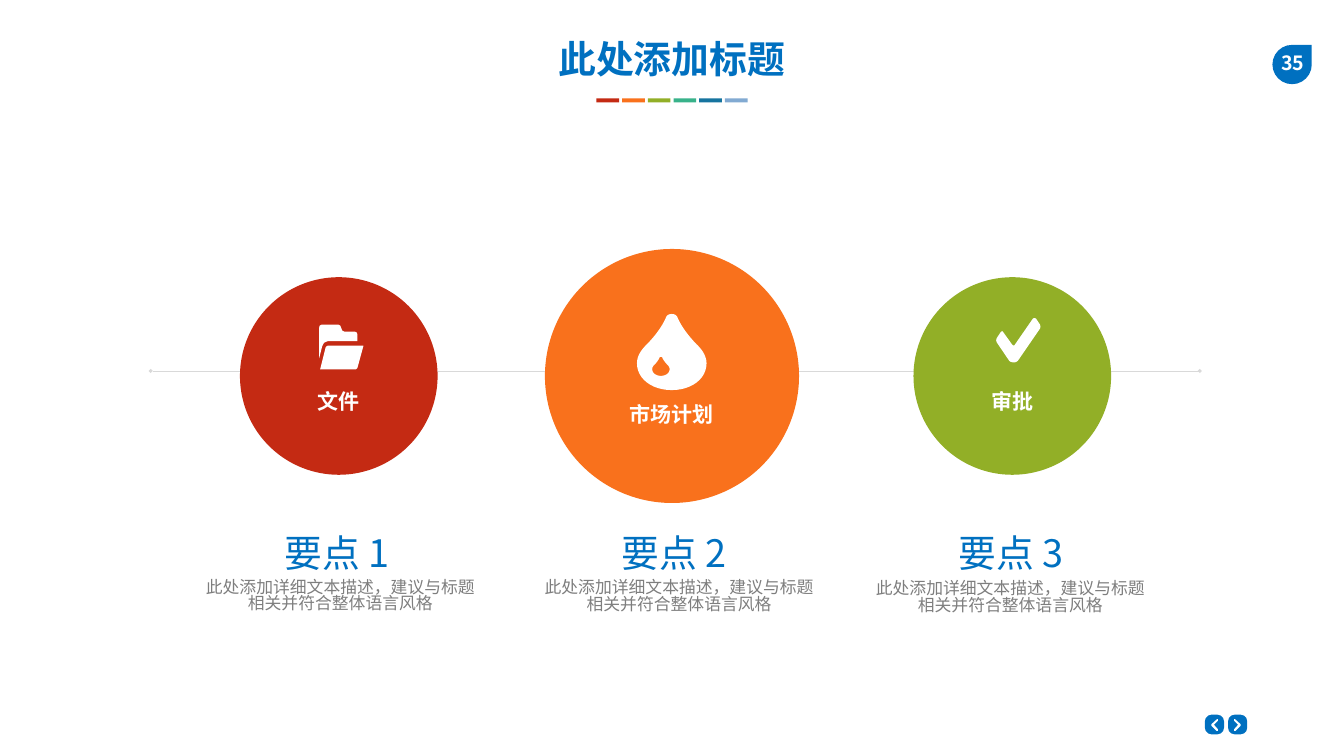
"""Build the three key points slide with circles, icons and captions."""
from lxml import etree
from pptx import Presentation
from pptx.dml.color import RGBColor
from pptx.enum.dml import MSO_LINE
from pptx.enum.shapes import MSO_CONNECTOR, MSO_SHAPE
from pptx.enum.text import MSO_ANCHOR, PP_ALIGN
from pptx.oxml.ns import qn
from pptx.util import Inches, Pt

OVAL, RECT, ROUND, TEAR = (MSO_SHAPE.OVAL, MSO_SHAPE.RECTANGLE,
                           MSO_SHAPE.ROUNDED_RECTANGLE, MSO_SHAPE.TEAR)
STRAIGHT, DOTTED = MSO_CONNECTOR.STRAIGHT, MSO_LINE.ROUND_DOT
MIDDLE, TOP, CENTER = MSO_ANCHOR.MIDDLE, MSO_ANCHOR.TOP, PP_ALIGN.CENTER

FONT = "Noto Sans CJK SC"
WHITE = RGBColor(0xFF, 0xFF, 0xFF)
BLUE = RGBColor(0x00, 0x70, 0xC0)
GRAY = RGBColor(0x7E, 0x7E, 0x7E)
PALE = RGBColor(0xD9, 0xD9, 0xD9)
RED = RGBColor(0xC4, 0x2A, 0x13)
ORANGE = RGBColor(0xF9, 0x71, 0x1C)
GREEN = RGBColor(0x92, 0xAF, 0x27)
TEAL = RGBColor(0x38, 0xB2, 0x8A)
OCEAN = RGBColor(0x16, 0x74, 0x9F)
SKY = RGBColor(0x82, 0xAA, 0xD2)

TITLE = "此处添加标题"
PAGE = "35"
DETAIL = "此处添加详细文本描述，建议与标题相关并符合整体语言风格"
POINTS = [
    dict(label="文件", head="要点 1", color=RED, center=6.72, size=3.92,
         drop=1.0, detail_at=(3.79, 11.38)),
    dict(label="市场计划", head="要点 2", color=ORANGE, center=13.33, size=5.04,
         drop=1.5, detail_at=(10.51, 11.39)),
    dict(label="审批", head="要点 3", color=GREEN, center=20.08, size=3.92,
         drop=1.0, detail_at=(17.08, 11.41)),
]
STRIPES = [RED, ORANGE, GREEN, TEAL, OCEAN, SKY]
CIRCLE_Y = 7.46

CHECK = [(20.09, 7.19), (20.05, 7.18), (20.02, 7.16), (19.77, 6.79), (19.76, 6.75),
         (19.77, 6.71), (19.85, 6.59), (19.88, 6.57), (19.9, 6.59), (20.08, 6.84),
         (20.11, 6.86), (20.13, 6.84), (20.49, 6.32), (20.52, 6.31), (20.55, 6.32),
         (20.63, 6.44), (20.64, 6.48), (20.63, 6.52), (20.19, 7.16), (20.16, 7.18),
         (20.13, 7.19)]
FOLDER_BACK = [(6.5, 6.77), (6.47, 6.78), (6.43, 6.8), (6.41, 6.83), (6.39, 6.87),
               (6.33, 7.11), (6.33, 6.51), (6.34, 6.46), (6.38, 6.44), (6.71, 6.44),
               (6.75, 6.46), (6.77, 6.51), (6.79, 6.56), (6.83, 6.58), (7.04, 6.58),
               (7.08, 6.6), (7.09, 6.64), (7.09, 6.77)]
FOLDER_FRONT = [(7.21, 6.86), (7.09, 7.3), (7.07, 7.32), (7.05, 7.33), (6.35, 7.33),
                (6.46, 6.89), (6.48, 6.87), (6.5, 6.86)]
DROP_CURVES = [
    [(0, 0), (0.06, 0), (0.1, 0.03), (0.11, 0.06)],
    [(0.11, 0.06), (0.2, 0.27), (0.34, 0.44), (0.49, 0.6)],
    [(0.49, 0.6), (0.62, 0.72), (0.69, 0.85), (0.69, 0.98)],
    [(0.69, 0.98), (0.69, 1.28), (0.4, 1.51), (0, 1.51)],
]
CHEVRON = [(0.05, -0.11), (0.07, -0.11), (0.07, -0.08), (-0.01, 0), (0.07, 0.09),
           (0.07, 0.12), (0.04, 0.12), (-0.06, 0.02), (-0.06, -0.01)]
ARROWS = [(24.09, 1), (24.55, -1)]


def bezier(curve, steps=12):
    for i in range(steps):
        t = i / steps
        weights = ((1 - t) ** 3, 3 * t * (1 - t) ** 2, 3 * t * t * (1 - t), t ** 3)
        yield tuple(sum(w * pt[axis] for w, pt in zip(weights, curve)) for axis in (0, 1))


def droplet(cx, top, scale):
    right = [pt for curve in DROP_CURVES for pt in bezier(curve)] + [(0, 1.51)]
    left = [(-x, y) for x, y in reversed(right[1:-1])]
    return [(cx + x * scale, top + y * scale) for x, y in right + left]


def paint(sp, color):
    sp.shadow.inherit = False
    sp.fill.solid()
    sp.fill.fore_color.rgb = color
    sp.line.fill.background()
    return sp


def add_shape(s, kind, box, color):
    return paint(s.shapes.add_shape(kind, *map(Inches, box)), color)


def add_icon(s, *contours):
    emu = [[(Inches(x), Inches(y)) for x, y in c] for c in contours]
    builder = s.shapes.build_freeform(*emu[0][0])
    builder.add_line_segments(emu[0][1:], close=True)
    for c in emu[1:]:
        builder.move_to(*c[0])
        builder.add_line_segments(c[1:], close=True)
    return paint(builder.convert_to_shape(), WHITE)


def write(sp, text, size, color, bold=False, anchor=MIDDLE, inset=(0.27, 0.13),
          top=None, spacing=None):
    tf = sp.text_frame
    side, edge = inset
    frame = dict(word_wrap=True, vertical_anchor=anchor,
                 margin_left=Inches(side), margin_right=Inches(side),
                 margin_top=Inches(edge if top is None else top),
                 margin_bottom=Inches(edge))
    for name, value in frame.items():
        setattr(tf, name, value)
    p = tf.paragraphs[0]
    p.alignment, p.line_spacing = CENTER, spacing
    r = p.add_run()
    r.text = text
    for name, value in dict(name=FONT, size=Pt(size), bold=bold).items():
        setattr(r.font, name, value)
    r.font.color.rgb = color
    etree.SubElement(r.font._element, qn("a:ea"), typeface=FONT)


def add_text(s, box, *args, **kwargs):
    write(s.shapes.add_textbox(*map(Inches, box)), *args, **kwargs)


def add_axis(s):
    line = s.shapes.add_connector(STRAIGHT, *map(Inches, (2.99, 7.36, 23.8, 7.36)))
    line.line.color.rgb = PALE
    line.line.width = Pt(0.5)
    line.line.dash_style = DOTTED
    ln = line.line._get_or_add_ln()
    for end in ("a:headEnd", "a:tailEnd"):
        etree.SubElement(ln, qn(end), type="diamond")
    etree.SubElement(line._element.spPr, qn("a:effectLst"))


def main():
    prs = Presentation()
    prs.slide_width, prs.slide_height = Inches(26.66), Inches(15)
    s = prs.slides.add_slide(prs.slide_layouts[5])

    title = s.shapes.title
    for name, value in zip(("left", "top", "width", "height"), (5.97, 0.65, 14.71, 1.01)):
        setattr(title, name, Inches(value))
    write(title, TITLE, 54, BLUE, bold=True, inset=(0.1, 0.05))
    for i, color in enumerate(STRIPES):
        add_shape(s, RECT, (11.83 + i * 0.51, 1.95, 0.45, 0.08), color)

    add_shape(s, TEAR, (25.24, 0.89, 0.78, 0.78), BLUE)
    add_text(s, (25.16, 0.9, 0.97, 0.67), PAGE, 28, WHITE, bold=True, inset=(0.1, 0.1))

    add_axis(s)
    for i, pt in enumerate(POINTS):
        size = pt["size"]
        circle = add_shape(s, OVAL, (pt["center"] - size / 2, CIRCLE_Y - size / 2, size, size),
                           pt["color"])
        write(circle, pt["label"], 30, WHITE, bold=True, inset=(0.2, 0.1),
              top=0.1 + pt["drop"])
        add_text(s, (3.63 + i * 6.685, 10.38, 6.1, 1.17), pt["head"], 54, BLUE)
        add_text(s, (*pt["detail_at"], 5.92, 1.41), DETAIL, 24, GRAY, anchor=TOP,
                 spacing=0.82)

    add_icon(s, FOLDER_BACK, FOLDER_FRONT)
    add_icon(s, droplet(13.325, 6.23, 1), droplet(13.11, 7.08, 0.25))
    add_icon(s, CHECK)

    for cx, direction in ARROWS:
        button = add_shape(s, ROUND, (cx - 0.19, 14.18, 0.38, 0.39), BLUE)
        button.adjustments[0] = 0.35
        add_icon(s, [(cx + direction * x, 14.38 + y) for x, y in CHEVRON])

    prs.save("out.pptx")


if __name__ == "__main__":
    main()
